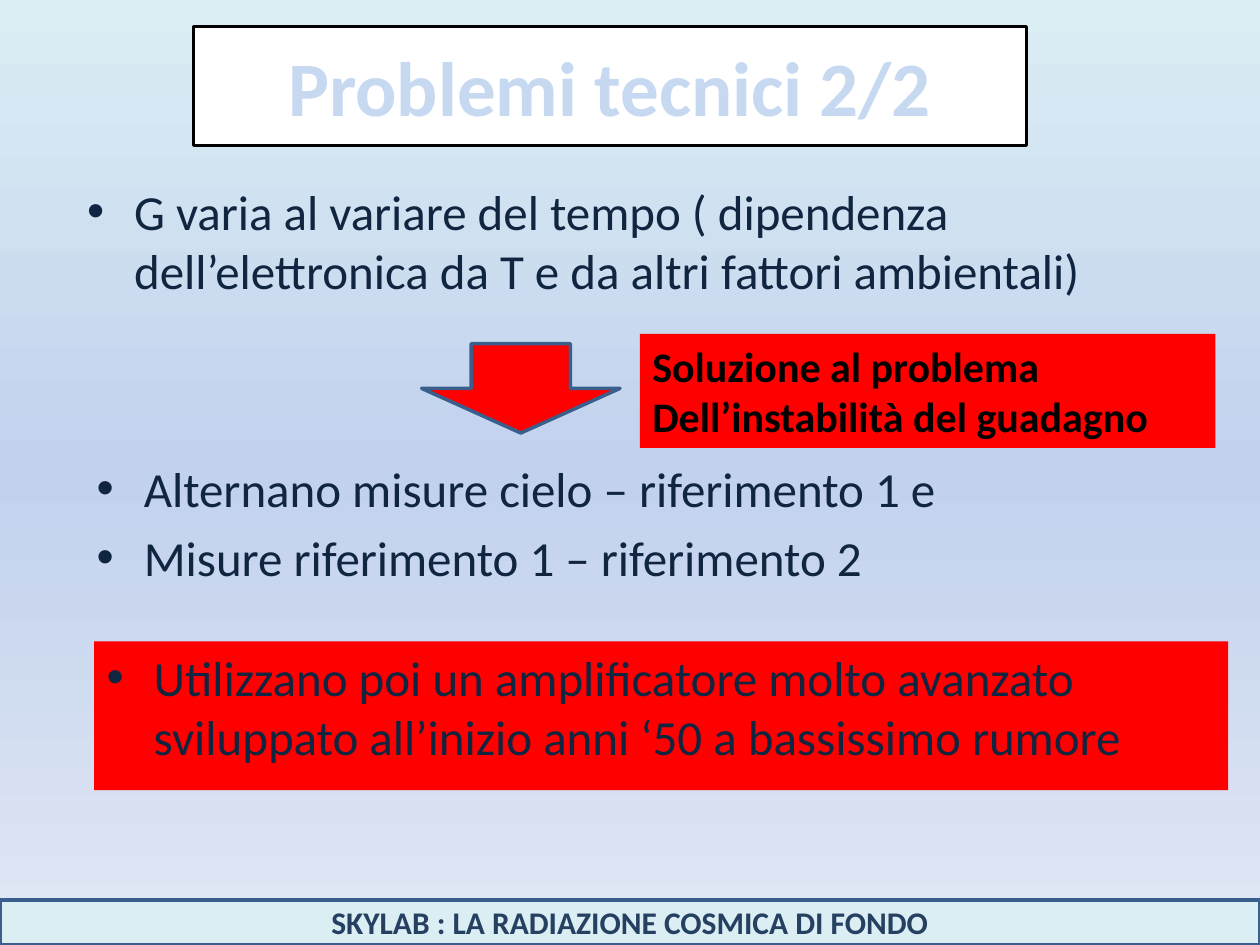
from copy import deepcopy
from lxml import etree
from pptx import Presentation
from pptx.dml.color import RGBColor
from pptx.enum.shapes import MSO_SHAPE
from pptx.enum.text import MSO_ANCHOR, MSO_AUTO_SIZE, PP_ALIGN
from pptx.oxml.ns import qn
from pptx.util import Cm, Pt

RECT, DOWN_ARROW = MSO_SHAPE.RECTANGLE, MSO_SHAPE.DOWN_ARROW
TOP, MIDDLE = MSO_ANCHOR.TOP, MSO_ANCHOR.MIDDLE
LEFT, CENTER = PP_ALIGN.LEFT, PP_ALIGN.CENTER
NO_FIT = MSO_AUTO_SIZE.NONE

COLORS = {
    "sky": "DBEEF4", "periwinkle": "C2D1ED", "mist": "E1E8F5",
    "red": "FF0000", "white": "FFFFFF", "black": "000000",
    "edge": "3A5F8C", "title": "C6D9F1", "text": "10253F", "footer": "254061",
}
FONT = "Calibri"
INDENT = Cm(0.95)


def rgb(name):
    return RGBColor.from_string(COLORS[name])


def place(sp, box):
    sp.left, sp.top, sp.width, sp.height = (Cm(v) for v in box)


def paint(sp, fill, line=None, width=2):
    sp.fill.solid()
    sp.fill.fore_color.rgb = rgb(fill)
    if line:
        sp.line.color.rgb = rgb(line)
        sp.line.width = Pt(width)
    else:
        sp.line.fill.background()


def add_block(s, kind, box, fill, line=None):
    sp = s.shapes.add_shape(kind, *(Cm(v) for v in box))
    sp.shadow.inherit = False
    paint(sp, fill, line)
    return sp


def write(sp, lines, size, color, bold=False, align=LEFT, anchor=TOP):
    tf = sp.text_frame
    tf.text = "\n".join(lines)
    tf.word_wrap = True
    tf.auto_size = NO_FIT
    tf.vertical_anchor = anchor
    for p in tf.paragraphs:
        p.alignment = align
        for r in p.runs:
            r.font.name = FONT
            r.font.size = Pt(size)
            r.font.bold = bold
            r.font.color.rgb = rgb(color)


def write_bullets(sp, lines):
    write(sp, lines, 28, "text")
    for i, p in enumerate(sp.text_frame.paragraphs):
        pPr = p._p.get_or_add_pPr()
        pPr.set("marL", str(INDENT))
        pPr.set("indent", str(-INDENT))
        etree.SubElement(pPr, qn("a:buFont")).set("typeface", "Arial")
        etree.SubElement(pPr, qn("a:buChar")).set("char", "•")
        p.space_before = Pt(5.6 if i else 0)


def background(s):
    fill = s.background.fill
    fill.gradient()
    fill.gradient_angle = 270
    first = fill._fill._gradFill.find(qn("a:gsLst"))[0]
    first.addnext(deepcopy(first))
    names = ("sky", "periwinkle", "mist")
    for i, (stop, name) in enumerate(zip(fill.gradient_stops, names)):
        stop.position = i / 2
        stop.color.rgb = rgb(name)


def footer(s, box):
    sp = add_block(s, RECT, box, "sky", "edge")
    write(sp, ["SKYLAB : LA RADIAZIONE COSMICA DI FONDO"], 18, "footer", True, CENTER, MIDDLE)


def title(s, box):
    sp = s.shapes.title
    place(sp, box)
    paint(sp, "white", "black", 1.75)
    write(sp, ["Problemi tecnici 2/2"], 44, "title", True, CENTER, MIDDLE)


def problem(s, box):
    sp = s.placeholders[1]
    place(sp, box)
    write_bullets(sp, ["G varia al variare del tempo ( dipendenza dell’elettronica da T e da altri fattori ambientali)"])


def solution(s, box):
    x, y, w, h = box
    add_block(s, DOWN_ARROW, (x, y + 0.2, 4, 1.8), "red", "edge")
    caption = add_block(s, RECT, (x + 4.4, y, w - 4.4, h), "red")
    write(caption, ["Soluzione al problema", "Dell’instabilità del guadagno"], 24, "black", True)


def measures(s, box):
    sp = s.shapes.add_textbox(*(Cm(v) for v in box))
    write_bullets(sp, ["Alternano misure cielo – riferimento 1 e", "Misure riferimento 1 – riferimento 2"])


def amplifier(s, box):
    sp = add_block(s, RECT, box, "red")
    write_bullets(sp, ["Utilizzano poi un amplificatore molto avanzato sviluppato all’inizio anni ‘50 a bassissimo rumore"])


def main():
    prs = Presentation()
    prs.slide_width, prs.slide_height = Cm(25.4), Cm(19.05)
    s = prs.slides.add_slide(prs.slide_layouts[1])
    background(s)
    footer(s, (0, 18.14, 25.4, 0.91))
    title(s, (3.9, 0.53, 16.8, 2.4))
    problem(s, (1.5, 3.53, 22.86, 2.8))
    solution(s, (8.5, 6.73, 16, 2.3))
    measures(s, (1.7, 9.12, 22.86, 3))
    amplifier(s, (1.9, 12.93, 22.86, 3))
    prs.save("out.pptx")


if __name__ == "__main__":
    main()
